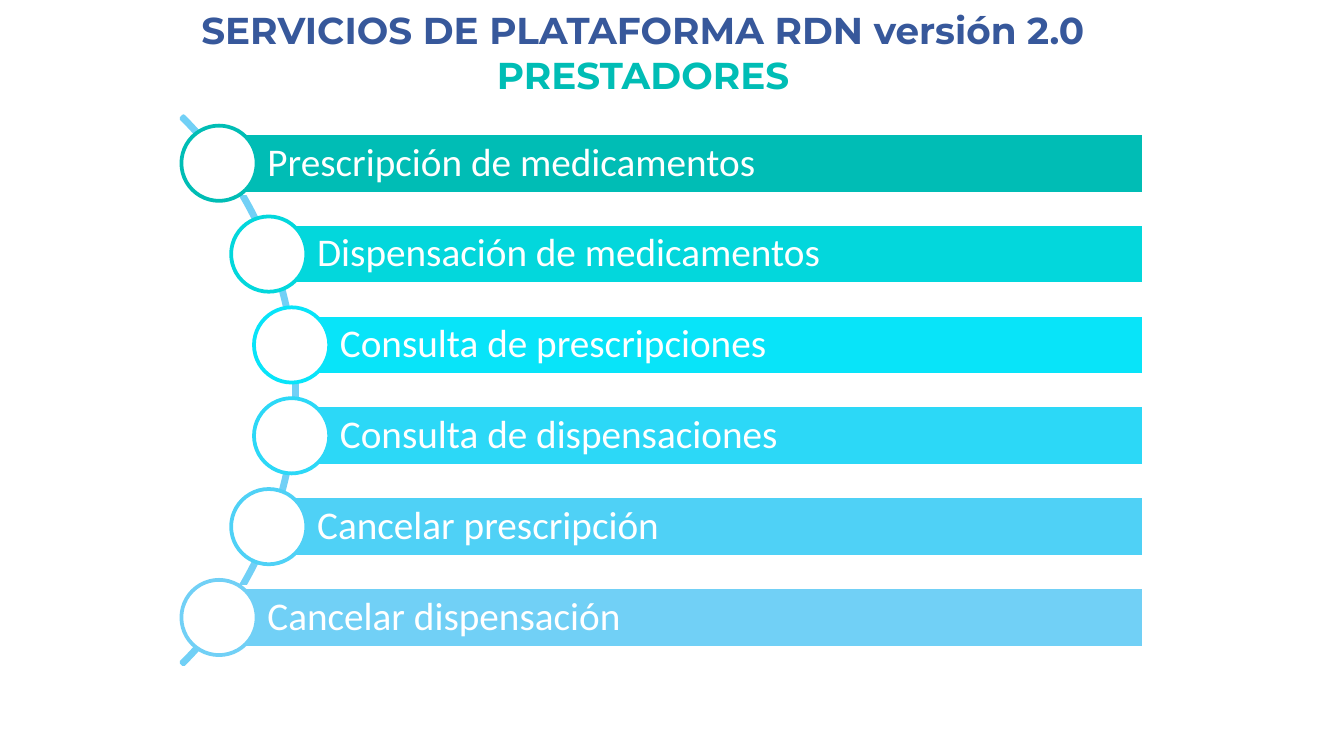
"""Build the slide listing the RDN platform services for providers."""
from pptx import Presentation
from pptx.dml.color import RGBColor
from pptx.enum.shapes import MSO_SHAPE
from pptx.enum.text import MSO_ANCHOR, PP_ALIGN
from pptx.util import Inches, Pt

ARC, BAR, CIRCLE = MSO_SHAPE.BLOCK_ARC, MSO_SHAPE.RECTANGLE, MSO_SHAPE.OVAL
MIDDLE = MSO_ANCHOR.MIDDLE
LEFT, CENTER = PP_ALIGN.LEFT, PP_ALIGN.CENTER

COLORS = {
    "white": "FFFFFF", "navy": "37589B", "teal": "00BDB5",
    "turquoise": "03D7DC", "cyan": "08E4F9", "aqua": "2CD8F7",
    "sky": "4FD1F6", "pale": "71D0F6",
}
TITLE = [("SERVICIOS DE PLATAFORMA RDN versión 2.0", "navy"), ("PRESTADORES", "teal")]
SERVICES = [
    ("Prescripción de medicamentos", "teal", 1.63),
    ("Dispensación de medicamentos", "turquoise", 2),
    ("Consulta de prescripciones", "cyan", 2.17),
    ("Consulta de dispensaciones", "aqua", 2.17),
    ("Cancelar prescripción", "sky", 2),
    ("Cancelar dispensación", "pale", 1.63),
]
SLIDE_WIDTH = 10
SLIDE_HEIGHT = SLIDE_WIDTH * 9 / 16
FIRST_TOP, LAST_TOP = 0.99, 4.37
BAR_RIGHT, BAR_HEIGHT, DIAMETER = 8.51, 0.45, 0.56


def color(name):
    return RGBColor.from_string(COLORS[name])


def add_outlined(page, kind, left, top, width, height, line, fill=None):
    shape = page.shapes.add_shape(
        kind, Inches(left), Inches(top), Inches(width), Inches(height))
    shape.shadow.inherit = False
    if fill:
        shape.fill.solid()
        shape.fill.fore_color.rgb = color(fill)
    else:
        shape.fill.background()
    shape.line.color.rgb = color(line)
    shape.line.width = Pt(2)
    return shape


def set_text(para, text, *, font, size, ink, align, bold=False, spacing=None):
    para.alignment = align
    para.line_spacing = spacing
    span = para.add_run()
    span.text = text
    span.font.name = font
    span.font.size = Pt(size)
    span.font.bold = bold
    span.font.color.rgb = color(ink)


def add_title(page):
    box = page.shapes.add_textbox(Inches(1.28), 0, Inches(7.01), Inches(0.77))
    frame = box.text_frame
    frame.word_wrap = True
    frame.vertical_anchor = MIDDLE
    for index, (text, ink) in enumerate(TITLE):
        para = frame.add_paragraph() if index else frame.paragraphs[0]
        set_text(para, text, font="Montserrat", size=20, ink=ink, align=CENTER, bold=True)


def add_service(page, top, text, shade, center):
    bar = add_outlined(page, BAR, center, top, BAR_RIGHT - center, BAR_HEIGHT, "white", shade)
    frame = bar.text_frame
    frame.word_wrap = True
    frame.vertical_anchor = MIDDLE
    frame.margin_left = Inches(0.36)
    frame.margin_right = frame.margin_top = frame.margin_bottom = Inches(0.06)
    set_text(frame.paragraphs[0], text, font="Calibri", size=21, ink="white",
             align=LEFT, spacing=0.9)
    circle_top = top + (BAR_HEIGHT - DIAMETER) / 2
    add_outlined(page, CIRCLE, center - DIAMETER / 2, circle_top,
                 DIAMETER, DIAMETER, shade, "white")


def main():
    deck = Presentation()
    deck.slide_width, deck.slide_height = Inches(SLIDE_WIDTH), Inches(SLIDE_HEIGHT)
    page = deck.slides.add_slide(deck.slide_layouts[6])
    add_title(page)
    arc = add_outlined(page, ARC, -3.56, 0.02, 5.77, 5.77, "pale")
    for index, value in enumerate((189, 27, 0.004)):
        arc.adjustments[index] = value
    pitch = (LAST_TOP - FIRST_TOP) / (len(SERVICES) - 1)
    for index, service in enumerate(SERVICES):
        add_service(page, FIRST_TOP + index * pitch, *service)
    deck.save("out.pptx")


if __name__ == "__main__":
    main()
